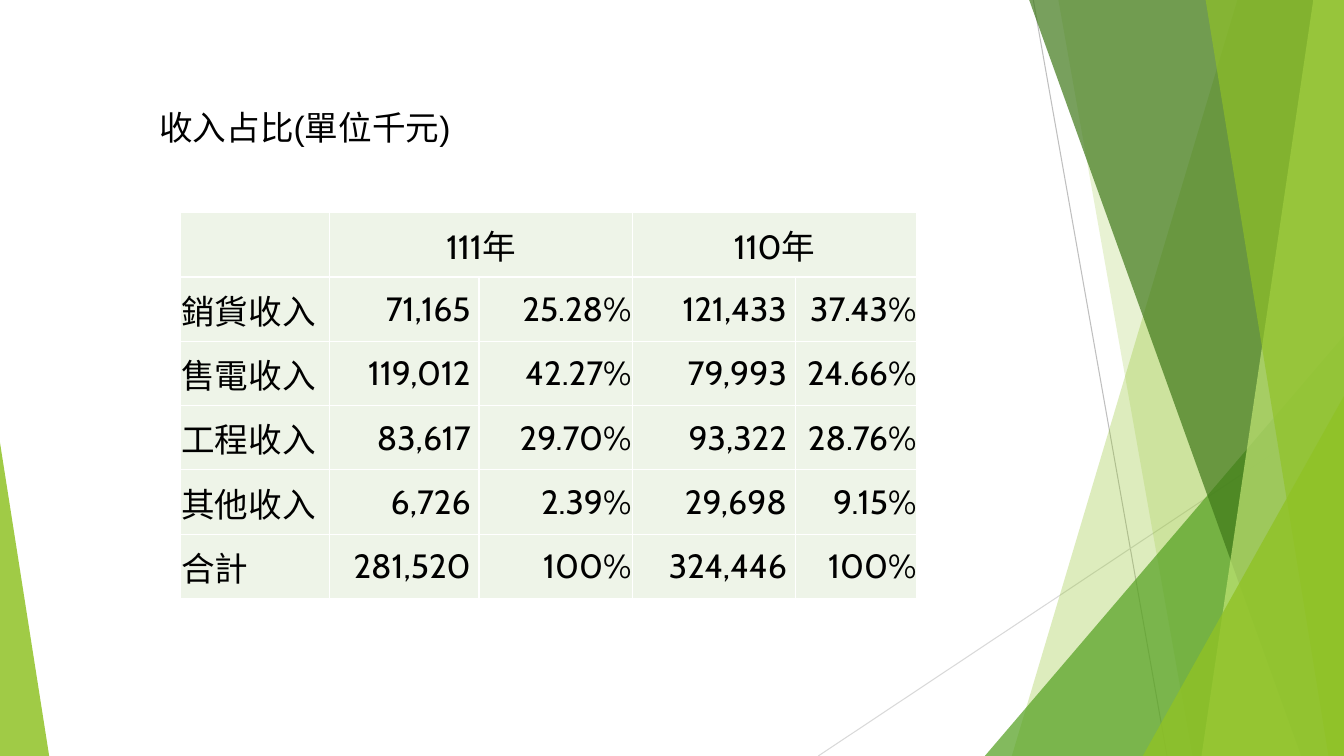
import lxml.etree
import pptx
import pptx.dml.color
import pptx.enum.shapes
import pptx.enum.text
import pptx.oxml.ns
import pptx.util

Cm = pptx.util.Cm
Pt = pptx.util.Pt
qn = pptx.oxml.ns.qn
ALIGN = pptx.enum.text.PP_ALIGN
ANCHOR = pptx.enum.text.MSO_ANCHOR

WIDTH, HEIGHT = 33.87, 19.05
COLOURS = {
    "text": "000000", "cell": "EEF4E8", "border": "FFFFFF",
    "grey": "BFBFBF", "pale_grey": "D9D9D9", "lime": "90C226",
    "green": "54A021", "dark_green": "3F7819", "pale_lime": "C0E474",
}
COLUMN_WIDTHS = [3.76, 3.76, 3.86, 4.11, 3.07]
ROW_HEIGHT = 1.62
INCOME_ROWS = [
    ["", "111年", "", "110年", ""],
    ["銷貨收入", "71,165 ", "25.28%", "121,433 ", "37.43%"],
    ["售電收入", "119,012 ", "42.27%", "79,993 ", "24.66%"],
    ["工程收入", "83,617 ", "29.70%", "93,322 ", "28.76%"],
    ["其他收入", "6,726 ", "2.39%", "29,698 ", "9.15%"],
    ["合計", "281,520 ", "100%", "324,446 ", "100%"],
]


def rgb(name):
    return pptx.dml.color.RGBColor.from_string(COLOURS[name])


def apply(target, values):
    for name, value in values.items():
        setattr(target, name, value)


class SlideBuilder:
    def __init__(self, slide):
        self.slide = slide
        self.shapes = slide.shapes
        self.font_size = Pt(24)
        self.border_width = Pt(1)

    def add_text(self, paragraph, text, font_name, alignment):
        paragraph.alignment = alignment
        run = paragraph.add_run()
        run.text = text
        apply(run.font, {"name": font_name, "size": self.font_size})
        run.font.color.rgb = rgb("text")

    def line(self, start, end, colour):
        points = [Cm(value) for value in (*start, *end)]
        connector = self.shapes.add_connector(
            pptx.enum.shapes.MSO_CONNECTOR.STRAIGHT, *points)
        connector.line.color.rgb = rgb(colour)
        connector.line.width = Pt(0.75)
        lxml.etree.SubElement(connector._element.spPr, qn("a:effectLst"))

    def paint(self, shape, colour, opacity):
        shape.shadow.inherit = False
        shape.line.fill.background()
        shape.fill.solid()
        shape.fill.fore_color.rgb = rgb(colour)
        colour_element = shape._element.spPr.find(".//" + qn("a:srgbClr"))
        lxml.etree.SubElement(colour_element, qn("a:alpha"), val=str(opacity * 1000))

    def panel(self, top_left, bottom_left, colour, opacity):
        top = -0.02
        corners = [(top_left, top), (WIDTH, top), (WIDTH, HEIGHT), (bottom_left, HEIGHT)]
        points = [(Cm(x), Cm(y)) for x, y in corners]
        builder = self.shapes.build_freeform(*points[0])
        builder.add_line_segments(points[1:], close=True)
        self.paint(builder.convert_to_shape(), colour, opacity)

    def triangle(self, left, top, width, apex, colour, opacity):
        shape = self.shapes.add_shape(
            pptx.enum.shapes.MSO_SHAPE.ISOSCELES_TRIANGLE,
            Cm(left), Cm(top), Cm(width), Cm(HEIGHT - top))
        shape.adjustments[0] = apex
        self.paint(shape, colour, opacity)

    def title(self, text, left, top, width, height):
        title = self.shapes.title
        apply(title, {"left": Cm(left), "top": Cm(top),
                      "width": Cm(width), "height": Cm(height)})
        apply(title.text_frame, {"vertical_anchor": ANCHOR.TOP, "word_wrap": True})
        self.add_text(title.text_frame.paragraphs[0], text, "Arial", ALIGN.LEFT)
        self.shapes._spTree.append(title._element)

    def style_cell(self, cell):
        cell.fill.solid()
        cell.fill.fore_color.rgb = rgb("cell")
        apply(cell, {"vertical_anchor": ANCHOR.MIDDLE, "margin_left": Cm(0.02),
                     "margin_right": Cm(0.02), "margin_top": Cm(0.02),
                     "margin_bottom": 0})
        properties = cell._tc.get_or_add_tcPr()
        for index, side in enumerate(("lnL", "lnR", "lnT", "lnB")):
            border = lxml.etree.Element(qn("a:" + side), w=str(int(self.border_width)))
            fill = lxml.etree.SubElement(border, qn("a:solidFill"))
            lxml.etree.SubElement(fill, qn("a:srgbClr"), val=COLOURS["border"])
            properties.insert(index, border)

    def table(self, rows, left, top):
        table = self.shapes.add_table(
            len(rows), len(COLUMN_WIDTHS), Cm(left), Cm(top),
            Cm(sum(COLUMN_WIDTHS)), Cm(ROW_HEIGHT * len(rows))).table
        for column, width in zip(table.columns, COLUMN_WIDTHS):
            column.width = Cm(width)
        for row_index, values in enumerate(rows):
            table.rows[row_index].height = Cm(ROW_HEIGHT)
            for column_index, text in enumerate(values):
                cell = table.cell(row_index, column_index)
                self.style_cell(cell)
                if row_index == 0:
                    alignment = ALIGN.CENTER
                else:
                    alignment = ALIGN.RIGHT if column_index else ALIGN.LEFT
                if text:
                    self.add_text(cell.text_frame.paragraphs[0], text, "Cabin", alignment)
        for first in (1, 3):
            table.cell(0, first).merge(table.cell(0, first + 1))


def main():
    presentation = pptx.Presentation()
    apply(presentation, {"slide_width": Cm(WIDTH), "slide_height": Cm(HEIGHT)})
    builder = SlideBuilder(presentation.slides.add_slide(presentation.slide_layouts[5]))
    builder.line((26.04, 0), (29.41, HEIGHT), "grey")
    builder.line((WIDTH, 10.24), (20.62, HEIGHT), "pale_grey")
    builder.panel(31.19, 25.5, "lime", 30)
    builder.panel(26.67, 30.05, "lime", 20)
    builder.triangle(24.82, 8.46, 9.05, 1, "green", 72)
    builder.panel(25.93, 32.79, "dark_green", 70)
    builder.panel(33.1, 30.28, "pale_lime", 70)
    builder.panel(30.38, 33.48, "lime", 65)
    builder.triangle(28.8, 9.98, 5.07, 1, "lime", 80)
    builder.triangle(0, 11.15, 1.24, 0, "lime", 85)
    builder.title("收入占比(單位千元)", 3.76, 2.57, 23.88, 3.66)
    builder.table(INCOME_ROWS, 4.55, 5.36)
    presentation.save("out.pptx")


if __name__ == "__main__":
    main()
